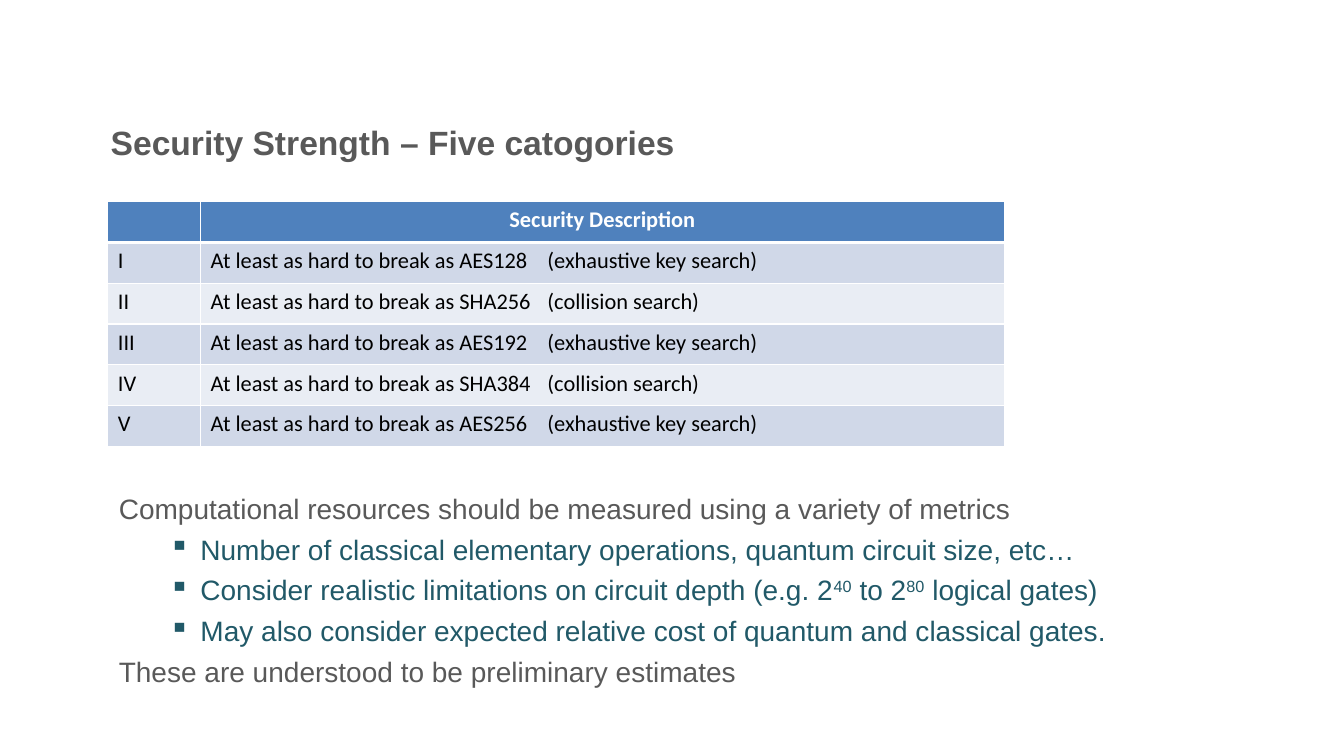
from pptx import Presentation
from pptx.dml.color import RGBColor
from pptx.enum.text import MSO_ANCHOR, PP_ALIGN
from pptx.oxml.ns import qn
from pptx.util import Inches, Pt
from lxml import etree

BOTTOM, TOP = MSO_ANCHOR.BOTTOM, MSO_ANCHOR.TOP
CENTER, LEFT = PP_ALIGN.CENTER, PP_ALIGN.LEFT

COLORS = {
    "grey": "595959", "teal": "215968", "header": "4F81BD",
    "odd": "D0D8E8", "even": "E9EDF4", "white": "FFFFFF", "black": "000000",
}
TITLE = "Security Strength – Five catogories"
HEADER = ("", "Security Description")
CATEGORIES = [
    ("I", "AES128", "exhaustive key search"),
    ("II", "SHA256", "collision search"),
    ("III", "AES192", "exhaustive key search"),
    ("IV", "SHA384", "collision search"),
    ("V", "AES256", "exhaustive key search"),
]
# Each line is (level, runs); every second run is an exponent.
NOTES = [
    (0, ["Computational resources should be measured using a variety of metrics"]),
    (1, ["Number of classical elementary operations, quantum circuit size, etc…"]),
    (1, ["Consider realistic limitations on circuit depth (e.g. 2", "40",
         " to 2", "80", " logical gates)"]),
    (1, ["May also consider expected relative cost of quantum and classical gates."]),
    (0, ["These are understood to be preliminary estimates"]),
]
NOTE_STYLES = [("grey", 0.38, -0.38, None), ("teal", 0.81, -0.31, "▪")]
COLUMN_WIDTHS = (0.92, 7.97)
ROW_HEIGHT = 0.405
ATTACK_TAB = 3.34


def add_run(paragraph, text, size, font, color, bold=False):
    run = paragraph.add_run()
    run.text = text
    run.font.size = Pt(size)
    run.font.name = font
    run.font.bold = bold
    run.font.color.rgb = RGBColor.from_string(COLORS[color])
    return run


def add_text_frame(slide, left, top, width, height, anchor):
    frame = slide.shapes.add_textbox(
        Inches(left), Inches(top), Inches(width), Inches(height)).text_frame
    frame.word_wrap = True
    frame.vertical_anchor = anchor
    return frame


def add_title(slide):
    paragraph = add_text_frame(slide, 1, 0.83, 12.33, 0.83, BOTTOM).paragraphs[0]
    paragraph.line_spacing = Pt(26)
    add_run(paragraph, TITLE, 24, "Arial", "grey", bold=True)


def set_borders(cell, bottom_width):
    properties = cell._tc.get_or_add_tcPr()
    widths = {"a:lnL": 1, "a:lnR": 1, "a:lnT": 1, "a:lnB": bottom_width}
    for position, (side, width) in enumerate(widths.items()):
        line = etree.Element(qn(side), w=str(Pt(width)))
        fill = etree.SubElement(line, qn("a:solidFill"))
        etree.SubElement(fill, qn("a:srgbClr"), val=COLORS["white"])
        properties.insert(position, line)


def add_tab_stop(paragraph, position):
    stops = etree.SubElement(paragraph._p.get_or_add_pPr(), qn("a:tabLst"))
    etree.SubElement(stops, qn("a:tab"), pos=str(Inches(position)), algn="l")


def add_categories(slide):
    rows = [HEADER] + [
        (category, f"At least as hard to break as {cipher}\t({attack})")
        for category, cipher, attack in CATEGORIES]
    table = slide.shapes.add_table(
        len(rows), len(COLUMN_WIDTHS), Inches(1.07), Inches(2),
        Inches(sum(COLUMN_WIDTHS)), Inches(ROW_HEIGHT * len(rows))).table
    for column, width in zip(table.columns, COLUMN_WIDTHS):
        column.width = Inches(width)
    for r, row in enumerate(rows):
        is_header = r == 0
        fill = "header" if is_header else ("even", "odd")[r % 2]
        for c, text in enumerate(row):
            cell = table.cell(r, c)
            cell.fill.solid()
            cell.fill.fore_color.rgb = RGBColor.from_string(COLORS[fill])
            set_borders(cell, 3 if is_header else 1)
            paragraph = cell.text_frame.paragraphs[0]
            paragraph.alignment = CENTER if is_header else LEFT
            if "\t" in text:
                add_tab_stop(paragraph, ATTACK_TAB)
            if text:
                add_run(paragraph, text, 16, "Calibri",
                        "white" if is_header else "black", is_header)


def add_notes(slide):
    frame = add_text_frame(slide, 1.08, 4.83, 11.17, 2.07, TOP)
    for i, (level, runs) in enumerate(NOTES):
        color, margin, indent, bullet = NOTE_STYLES[level]
        paragraph = frame.add_paragraph() if i else frame.paragraphs[0]
        paragraph.level = level
        properties = paragraph._p.get_or_add_pPr()
        properties.set("marL", str(Inches(margin)))
        properties.set("indent", str(Inches(indent)))
        if bullet:
            etree.SubElement(properties, qn("a:buChar"), char=bullet)
        else:
            etree.SubElement(properties, qn("a:buNone"))
        if i:
            paragraph.space_before = Pt(5)
        for k, text in enumerate(runs):
            run = add_run(paragraph, text, 20, "Arial", color)
            if k % 2:
                run._r.get_or_add_rPr().set("baseline", "30000")


def main():
    presentation = Presentation()
    presentation.slide_width = Inches(13.33)
    presentation.slide_height = Inches(7.5)
    slide = presentation.slides.add_slide(presentation.slide_layouts[6])
    add_title(slide)
    add_notes(slide)
    add_categories(slide)
    presentation.save("out.pptx")


if __name__ == "__main__":
    main()
